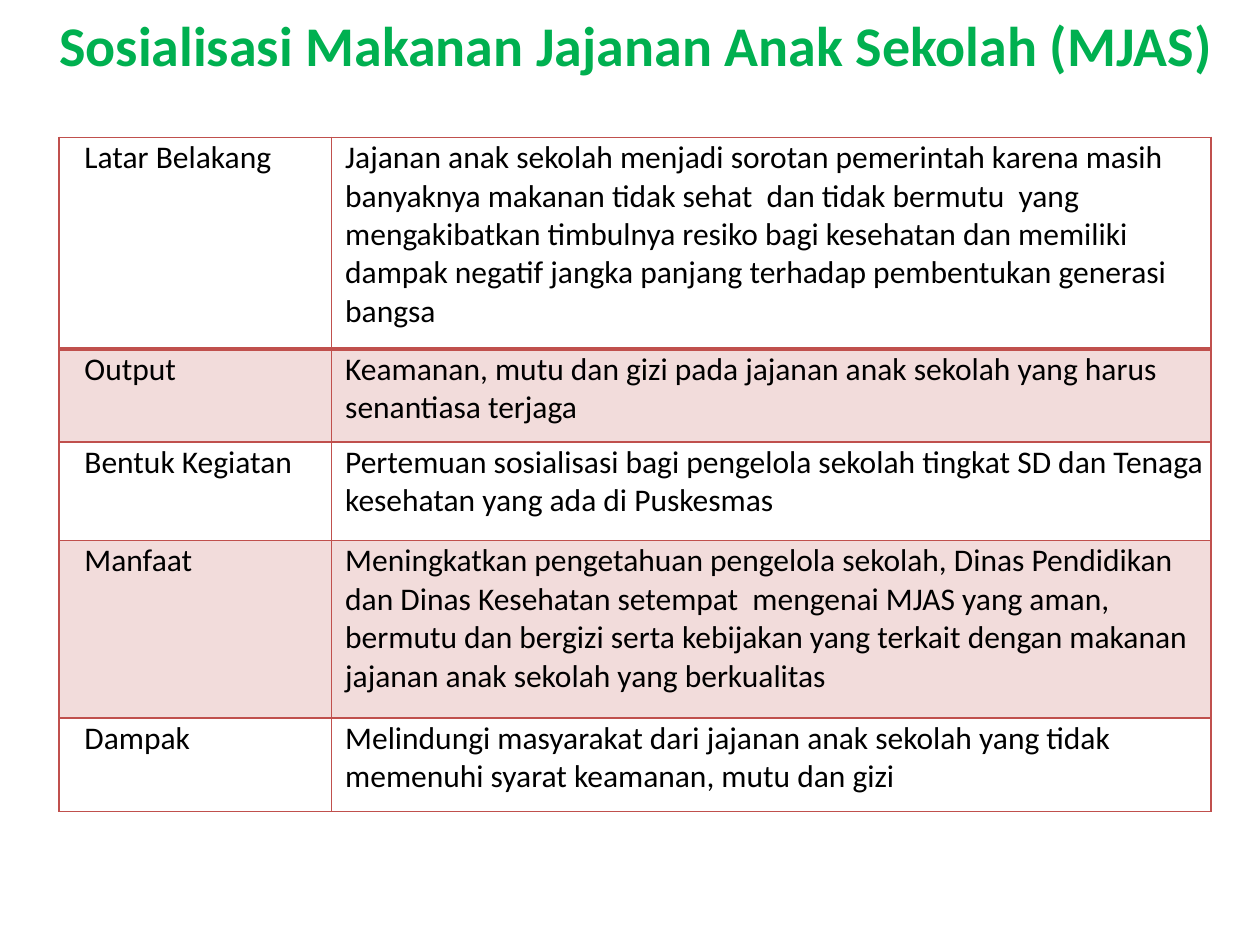
from lxml import etree
from pptx import Presentation
from pptx.dml.color import RGBColor
from pptx.enum.text import MSO_ANCHOR, PP_ALIGN
from pptx.oxml.ns import qn
from pptx.util import Inches, Pt

TOP = MSO_ANCHOR.TOP
CENTER = PP_ALIGN.CENTER
TITLE_ONLY = 5
FONT = "Calibri"
COLORS = {"title": "00B050", "text": "000000", "accent": "C0504D"}
BAND_ALPHA = 20
COL_WIDTHS = [2.16, 6.98]
ROW_HEIGHTS = [1.68, 0.74, 0.78, 1.41, 0.74]
INDENTS = [0.19, 0.1]
ROWS = [
    ("Latar Belakang",
     "Jajanan anak sekolah menjadi sorotan pemerintah karena masih banyaknya "
     "makanan tidak sehat  dan tidak bermutu  yang mengakibatkan timbulnya "
     "resiko bagi kesehatan dan memiliki dampak negatif jangka panjang "
     "terhadap pembentukan generasi bangsa"),
    ("Output",
     "Keamanan, mutu dan gizi pada jajanan anak sekolah yang harus "
     "senantiasa terjaga"),
    ("Bentuk Kegiatan",
     "Pertemuan sosialisasi bagi pengelola sekolah tingkat SD dan Tenaga "
     "kesehatan yang ada di Puskesmas"),
    ("Manfaat",
     "Meningkatkan pengetahuan pengelola sekolah, Dinas Pendidikan dan Dinas "
     "Kesehatan setempat  mengenai MJAS yang aman, bermutu dan bergizi serta "
     "kebijakan yang terkait dengan makanan jajanan anak sekolah yang "
     "berkualitas"),
    ("Dampak",
     "Melindungi masyarakat dari jajanan anak sekolah yang tidak memenuhi "
     "syarat keamanan, mutu dan gizi"),
]


def format_paragraph(p, size, color, indent, bold=False):
    p.font.name = FONT
    p.font.size = Pt(size)
    p.font.bold = bold
    p.font.color.rgb = RGBColor.from_string(COLORS[color])
    pPr = p._p.get_or_add_pPr()
    pPr.set("marL", str(int(Inches(indent))))
    pPr.set("indent", "0")


def add_title(slide, text):
    title = slide.shapes.title
    title.left, title.top = Inches(0), Inches(0)
    title.width, title.height = Inches(10), Inches(0.86)
    tf = title.text_frame
    tf.text = text
    tf.word_wrap = True
    tf.vertical_anchor = TOP
    tf.margin_top = Inches(0.08)
    p = tf.paragraphs[0]
    p.alignment = CENTER
    format_paragraph(p, 32, "title", 0.1, bold=True)


def set_borders(cell, widths):
    tcPr = cell._tc.get_or_add_tcPr()
    for side, width in widths.items():
        ln = etree.SubElement(tcPr, qn(f"a:ln{side}"), w=str(int(Pt(width))))
        fill = etree.SubElement(ln, qn("a:solidFill"))
        etree.SubElement(fill, qn("a:srgbClr"), val=COLORS["accent"])


def fill_band(cell):
    cell.fill.solid()
    cell.fill.fore_color.rgb = RGBColor.from_string(COLORS["accent"])
    color = cell._tc.tcPr.find(qn("a:solidFill")).find(qn("a:srgbClr"))
    etree.SubElement(color, qn("a:alpha"), val=str(BAND_ALPHA * 1000))


def format_cell(cell, text, indent, row):
    cell.text = text
    cell.margin_left = cell.margin_right = cell.margin_top = Inches(0.01)
    cell.margin_bottom = Inches(0)
    cell.vertical_anchor = TOP
    format_paragraph(cell.text_frame.paragraphs[0], 18, "text", indent)
    set_borders(cell, {"L": 1, "R": 1, "T": 2 if row == 1 else 1,
                       "B": 2 if row == 0 else 1})
    if row % 2:
        fill_band(cell)
    else:
        cell.fill.background()


def add_activity_table(slide):
    frame = slide.shapes.add_table(
        len(ROWS), len(COL_WIDTHS), Inches(0.47), Inches(1.09),
        Inches(sum(COL_WIDTHS)), Inches(sum(ROW_HEIGHTS)))
    table = frame.table
    table.first_row = False
    table.horz_banding = False
    for column, width in zip(table.columns, COL_WIDTHS):
        column.width = Inches(width)
    for row, height in zip(table.rows, ROW_HEIGHTS):
        row.height = Inches(height)
    for r, texts in enumerate(ROWS):
        for c, text in enumerate(texts):
            format_cell(table.cell(r, c), text, INDENTS[c], r)


def main():
    prs = Presentation()
    prs.slide_width, prs.slide_height = Inches(10), Inches(7.5)
    slide = prs.slides.add_slide(prs.slide_layouts[TITLE_ONLY])
    add_title(slide, "Sosialisasi Makanan Jajanan Anak Sekolah (MJAS)")
    add_activity_table(slide)
    prs.save("out.pptx")


if __name__ == "__main__":
    main()
